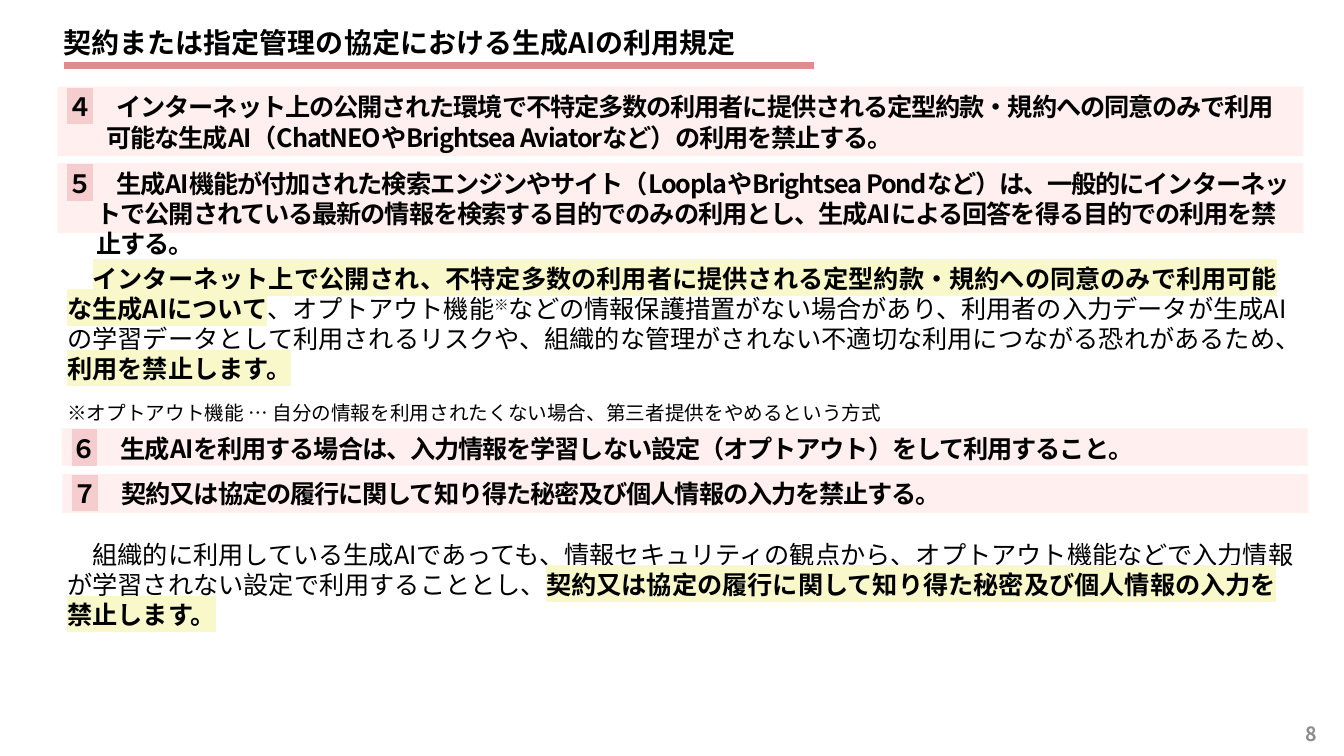
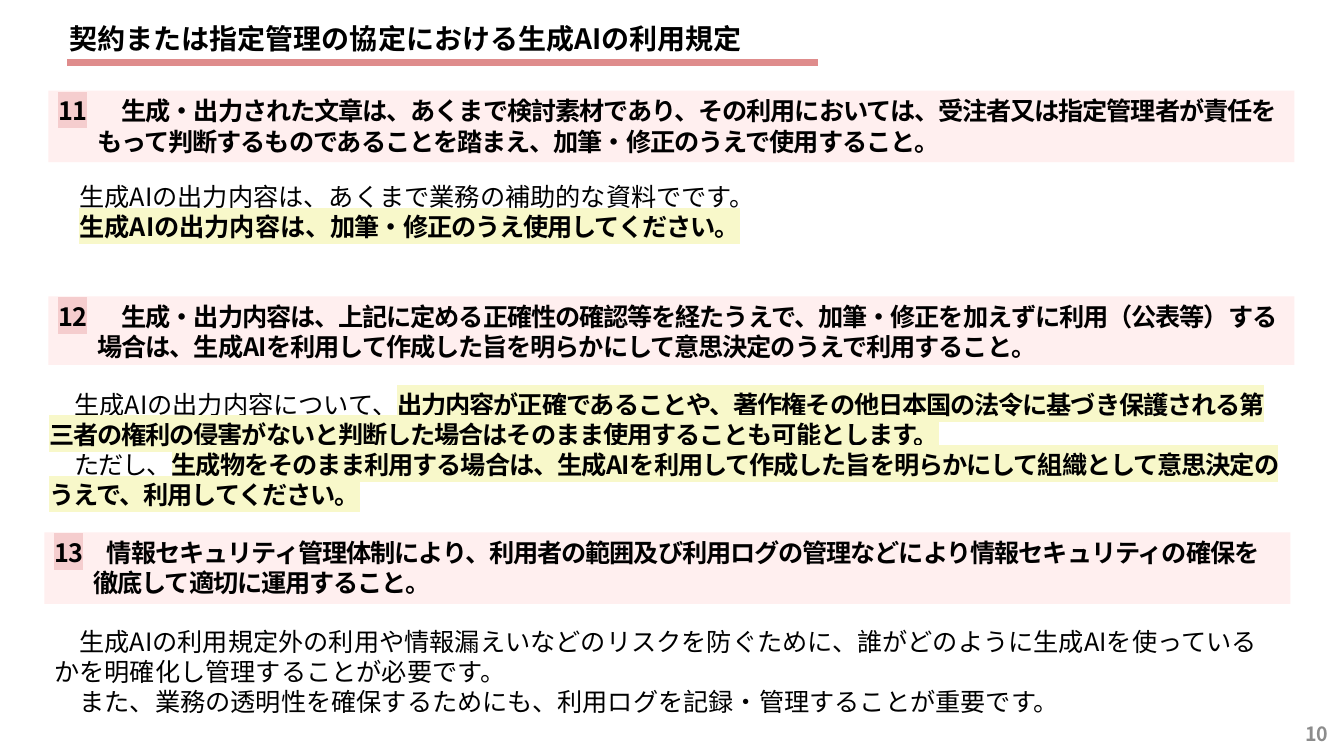
from lxml.etree import SubElement
from pptx import Presentation
from pptx.dml.color import RGBColor
from pptx.enum.shapes import MSO_CONNECTOR, MSO_SHAPE
from pptx.enum.text import MSO_ANCHOR, PP_ALIGN
from pptx.oxml.ns import qn
from pptx.util import Pt

COLORS = {"text": "000000", "number": "8C8C8C", "rule": "DF8C8C",
          "band": "FFEFEF", "badge": "F5CDCE", "mark": "F8F8CA"}
FONT = "Noto Sans CJK JP"
TITLE = "契約または指定管理の協定における生成AIの利用規定"
BAND_W = 890
TIGHT = -80
MARK = {"bold": True, "mark": "mark"}
TIGHT_MARK = {**MARK, "spc": TIGHT}


def rgb(name):
    """Return the named colour."""
    return RGBColor.from_string(COLORS[name])


def add_run(p, text, size=18, color="text", bold=False, mark=None, spc=0, raised=False):
    """Add one styled run to a paragraph."""
    r = p.add_run()
    r.text = text
    r.font.size, r.font.bold = Pt(size), bold
    r.font.color.rgb = rgb(color)
    rPr = r.font._element
    if mark:
        SubElement(SubElement(rPr, qn("a:highlight")), qn("a:srgbClr")).set("val", COLORS[mark])
    r.font.name = FONT
    SubElement(rPr, qn("a:ea")).set("typeface", FONT)
    if spc:
        rPr.set("spc", str(spc))
    if raised:
        rPr.set("baseline", "30000")


def set_indent(p, left, first):
    """Set the left margin and first-line indent of a paragraph."""
    pPr = p._p.get_or_add_pPr()
    pPr.set("marL", str(Pt(left)))
    pPr.set("indent", str(Pt(first)))


def add_text(s, x, y, w, h, anchor=MSO_ANCHOR.TOP):
    """Add an empty wrapping text box and return its frame."""
    tf = s.shapes.add_textbox(Pt(x), Pt(y), Pt(w), Pt(h)).text_frame
    tf.word_wrap = True
    tf.vertical_anchor = anchor
    return tf


def add_title(s, x, y, rule_x, rule_y):
    """Place the slide title and the rule under it."""
    tf = add_text(s, x, y, 754, 40, MSO_ANCHOR.MIDDLE)
    tf.margin_left = tf.margin_right = 0
    tf.margin_top = tf.margin_bottom = Pt(2)
    add_run(tf.paragraphs[0], TITLE, 20, bold=True)
    rule = s.shapes.add_connector(MSO_CONNECTOR.STRAIGHT, Pt(rule_x), Pt(rule_y),
                                  Pt(rule_x + 536), Pt(rule_y))
    rule.line.color.rgb = rgb("rule")
    rule.line.width = Pt(4.5)
    SubElement(rule._element.spPr, qn("a:effectLst"))


def add_number(s, number):
    """Place the slide number in the lower right corner."""
    tf = add_text(s, 925.2, 505.4, 34.8, 37.4, MSO_ANCHOR.MIDDLE)
    add_run(tf.paragraphs[0], number, 14, "number", True)


def add_band(s, x, y, h, badge, text, hang=28):
    """Place a tinted band holding a numbered rule."""
    sp = s.shapes.add_shape(MSO_SHAPE.RECTANGLE, Pt(x), Pt(y), Pt(BAND_W), Pt(h))
    sp.shadow.inherit = False
    sp.fill.solid()
    sp.fill.fore_color.rgb = rgb("band")
    sp.line.fill.background()
    tf = sp.text_frame
    tf.word_wrap = True
    tf.vertical_anchor = MSO_ANCHOR.TOP
    p = tf.paragraphs[0]
    p.alignment = PP_ALIGN.LEFT
    set_indent(p, hang, -hang)
    add_run(p, badge, bold=True, mark="badge", spc=TIGHT)
    add_run(p, "　" + text, bold=True, spc=TIGHT)


def add_body(s, x, y, w, h, paragraphs):
    """Place explanatory paragraphs, each a list of runs, and return the frame."""
    tf = add_text(s, x, y, w, h)
    for i, runs in enumerate(paragraphs):
        p = tf.paragraphs[0] if i == 0 else tf.add_paragraph()
        set_indent(p, 0, 18)
        for text, style in runs:
            add_run(p, text, **style)
    return tf


def build_rules_4_to_7(s):
    """Build the slide on banned services and inputs."""
    add_title(s, 45.4, 10.1, 45.4, 46.8)
    add_number(s, "8")
    add_band(s, 41, 61.9, 49.7, "４",
             "インターネット上の公開された環境で不特定多数の利用者に提供される定型約款・規約への"
             "同意のみで利用可能な生成AI（ChatNEOやBrightsea Aviatorなど）の利用を禁止する。")
    add_band(s, 41, 116.6, 49.7, "５",
             "生成AI機能が付加された検索エンジンやサイト（LooplaやBrightsea Pondなど）は、"
             "一般的にインターネットで公開されている最新の情報を検索する目的でのみの利用とし、"
             "生成AIによる回答を得る目的での利用を禁止する。", 21)
    tf = add_body(s, 41, 184.3, BAND_W, 101.5, [[
        ("インターネット上で公開され、不特定多数の利用者に提供される定型約款・規約への"
         "同意のみで利用可能な生成AIについて", MARK),
        ("、オプトアウト機能", {}),
        ("※", {"raised": True}),
        ("などの情報保護措置がない場合があり、利用者の入力データが生成AIの学習データとして"
         "利用されるリスクや、組織的な管理がされない不適切な利用につながる恐れがあるため、", {}),
        ("利用を禁止します。", MARK)]])
    p = tf.add_paragraph()
    p.space_before = Pt(12)
    add_run(p, "※オプトアウト機能 … 自分の情報を利用されたくない場合、第三者提供をやめるという方式", 14)
    add_band(s, 44, 306, 26.6, "６",
             "生成AIを利用する場合は、入力情報を学習しない設定（オプトアウト）をして利用すること。")
    add_band(s, 44.6, 338.4, 28.1, "７",
             "契約又は協定の履行に関して知り得た秘密及び個人情報の入力を禁止する。")
    add_body(s, 41, 381.6, BAND_W, 63.4, [[
        ("組織的に利用している生成AIであっても、情報セキュリティの観点から、オプトアウト機能など"
         "で入力情報が学習されない設定で利用することとし、", {}),
        ("契約又は協定の履行に関して知り得た秘密及び個人情報の入力を禁止します。", MARK)]])


def build_rules_11_to_13(s):
    """Build the slide on use of output and log management."""
    add_title(s, 49.7, 7.2, 48.2, 44.6)
    add_number(s, "10")
    add_band(s, 34.6, 64.8, 51.1, "11\t",
             "生成・出力された文章は、あくまで検討素材であり、その利用においては、受注者又は"
             "指定管理者が責任をもって判断するものであることを踏まえ、加筆・修正のうえで使用すること。")
    add_body(s, 31.7, 126, 897, 51.1, [
        [("生成AIの出力内容は、あくまで業務の補助的な資料でです。", {})],
        [("生成AIの出力内容は、", MARK), ("加筆・修正のうえ使用してください。", TIGHT_MARK)]])
    add_band(s, 34.6, 211.7, 49, "12\t",
             "生成・出力内容は、上記に定める正確性の確認等を経たうえで、加筆・修正を加えずに利用"
             "（公表等）する場合は、生成AIを利用して作成した旨を明らかにして意思決定のうえで利用すること。")
    add_body(s, 28.1, 274.3, 897, 94.3, [
        [("生成AIの出力内容について、", {}),
         ("出力内容が正確であることや、著作権その他日本国の法令に基づき保護される第三者の権利の侵害が"
          "ないと判断した場合はそのまま使用することも可能とします。", TIGHT_MARK)],
        [("ただし、", {"spc": TIGHT}),
         ("生成物をそのまま利用する場合は、生成AIを利用して作成した旨を明らかにして組織として"
          "意思決定のうえで、利用してください。", TIGHT_MARK)]])
    add_band(s, 31.7, 380.2, 51.1, "13",
             "情報セキュリティ管理体制により、利用者の範囲及び利用ログの管理などにより"
             "情報セキュリティの確保を徹底して適切に運用すること。")
    add_body(s, 31.7, 443.5, 883.4, 72.7, [
        [("生成AIの利用規定外の利用や情報漏えいなどのリスクを防ぐために、誰がどのように"
          "生成AIを使っているかを明確化し管理することが必要です。", {})],
        [("また、業務の透明性を確保するためにも、利用ログを記録・管理することが重要です。", {})]])


def main():
    """Build and save the presentation."""
    prs = Presentation()
    prs.slide_width, prs.slide_height = Pt(960), Pt(540)
    for build in (build_rules_4_to_7, build_rules_11_to_13):
        build(prs.slides.add_slide(prs.slide_layouts[6]))
    prs.save("out.pptx")


if __name__ == "__main__":
    main()
